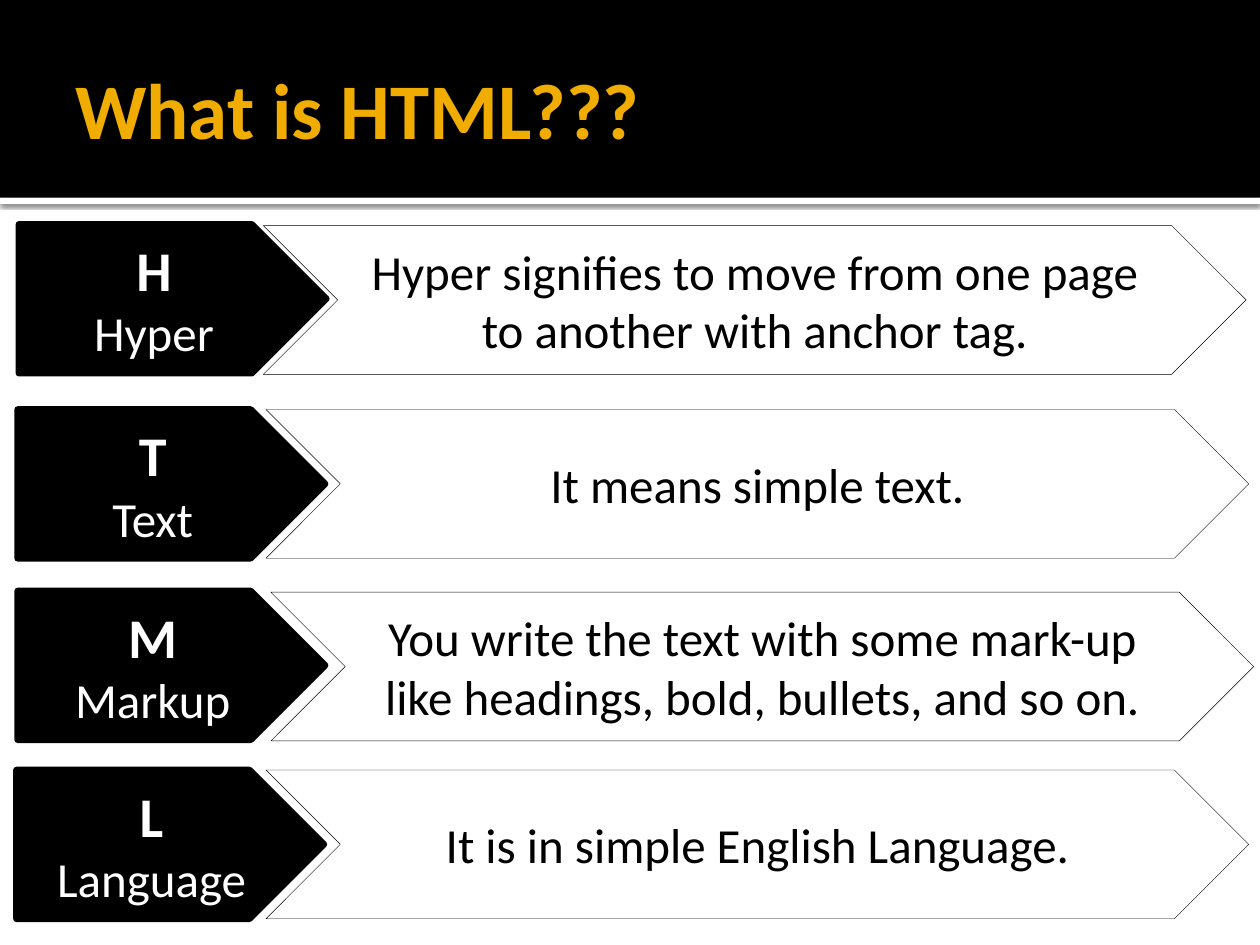
from pptx import Presentation
from pptx.dml.color import RGBColor
from pptx.enum.shapes import MSO_SHAPE as SHAPE
from pptx.enum.text import MSO_ANCHOR as ANCHOR, PP_ALIGN as ALIGN
from pptx.oxml import parse_xml
from pptx.oxml.ns import nsdecls
from pptx.util import Pt

BLACK = RGBColor(0x00, 0x00, 0x00)
WHITE = RGBColor(0xFF, 0xFF, 0xFF)
GOLD = RGBColor(0xF0, 0xAD, 0x00)


class Deck:
    font = "Calibri"

    def __init__(self, width, height):
        self.prs = Presentation()
        self.prs.slide_width, self.prs.slide_height = Pt(width), Pt(height)
        self.s = self.prs.slides.add_slide(self.prs.slide_layouts[6])

    def shape(self, kind, x, y, w, h, fill, line=None):
        sp = self.s.shapes.add_shape(kind, Pt(x), Pt(y), Pt(w), Pt(h))
        sp.shadow.inherit = False
        sp.fill.solid()
        sp.fill.fore_color.rgb = fill
        if line is None:
            sp.line.fill.background()
        else:
            sp.line.color.rgb = BLACK
            sp.line.width = Pt(line)
        return sp

    def drop_shadow(self, sp, blur, dist, alpha):
        effects = sp._element.spPr.find("{*}effectLst")
        effects.append(parse_xml(
            f'<a:outerShdw {nsdecls("a")} blurRad="{Pt(blur)}" dist="{Pt(dist)}" '
            f'dir="5400000" algn="t" rotWithShape="0"><a:srgbClr val="{BLACK}">'
            f'<a:alpha val="{alpha * 1000}"/></a:srgbClr></a:outerShdw>'))

    def add_text(self, sp, lines, color, align=ALIGN.CENTER):
        """Fill a shape with lines given as (text, size, bold)."""
        tf = sp.text_frame
        tf.word_wrap = True
        tf.vertical_anchor = ANCHOR.MIDDLE
        for i, (text, size, bold) in enumerate(lines):
            p = tf.add_paragraph() if i else tf.paragraphs[0]
            p.alignment = align
            r = p.add_run()
            r.text = text
            r.font.name, r.font.size, r.font.bold = self.font, Pt(size), bold
            r.font.color.rgb = color

    def title(self, text, x, y, w, h):
        sp = self.s.shapes.add_textbox(Pt(x), Pt(y), Pt(w), Pt(h))
        self.add_text(sp, [(text, 45, True)], GOLD, ALIGN.LEFT)
        tf = sp.text_frame
        tf.margin_left = Pt(7.2)
        tf.margin_right = tf.margin_top = tf.margin_bottom = Pt(3.6)

    def letter(self, x, y, word):
        sp = self.shape(SHAPE.PENTAGON, x, y, 175.7, 85, BLACK, 3.78)
        self.add_text(sp, [(word[0], 32, True), (word, 28, False)], WHITE)

    def meaning(self, x, y, text):
        sp = self.shape(SHAPE.CHEVRON, x, y, 561.6, 85, WHITE, 0.25)
        self.add_text(sp, [(text, 28, False)], BLACK)


# word, its left and top, meaning, its left and top
ROWS = [
    ("Hyper", 10.8, 128.2,
     "Hyper signifies to move from one page to another with anchor tag.", 150.5, 128.9),
    ("Text", 10.1, 234, "It means simple text.", 152, 234),
    ("Markup", 10.1, 337.7,
     "You write the text with some mark-up like headings, bold, bullets, and so on.",
     154.8, 338.4),
    ("Language", 9.4, 440, "It is in simple English Language.", 152, 440),
]


def main():
    deck = Deck(720, 540)

    # Header band with a shadowed rule below it
    rule = deck.shape(SHAPE.RECTANGLE, 0, 113, 720, 3.6, WHITE)
    deck.drop_shadow(rule, 2.5, 0.8, 60)
    deck.shape(SHAPE.RECTANGLE, 0, 0, 720, 113, BLACK)
    deck.title("What is HTML???", 36, 12.2, 648, 98.6)

    # Letters, then their meanings on top
    for word, x, y, *_ in ROWS:
        deck.letter(x, y, word)
    for *_, text, x, y in ROWS:
        deck.meaning(x, y, text)

    deck.prs.save("out.pptx")


if __name__ == "__main__":
    main()
